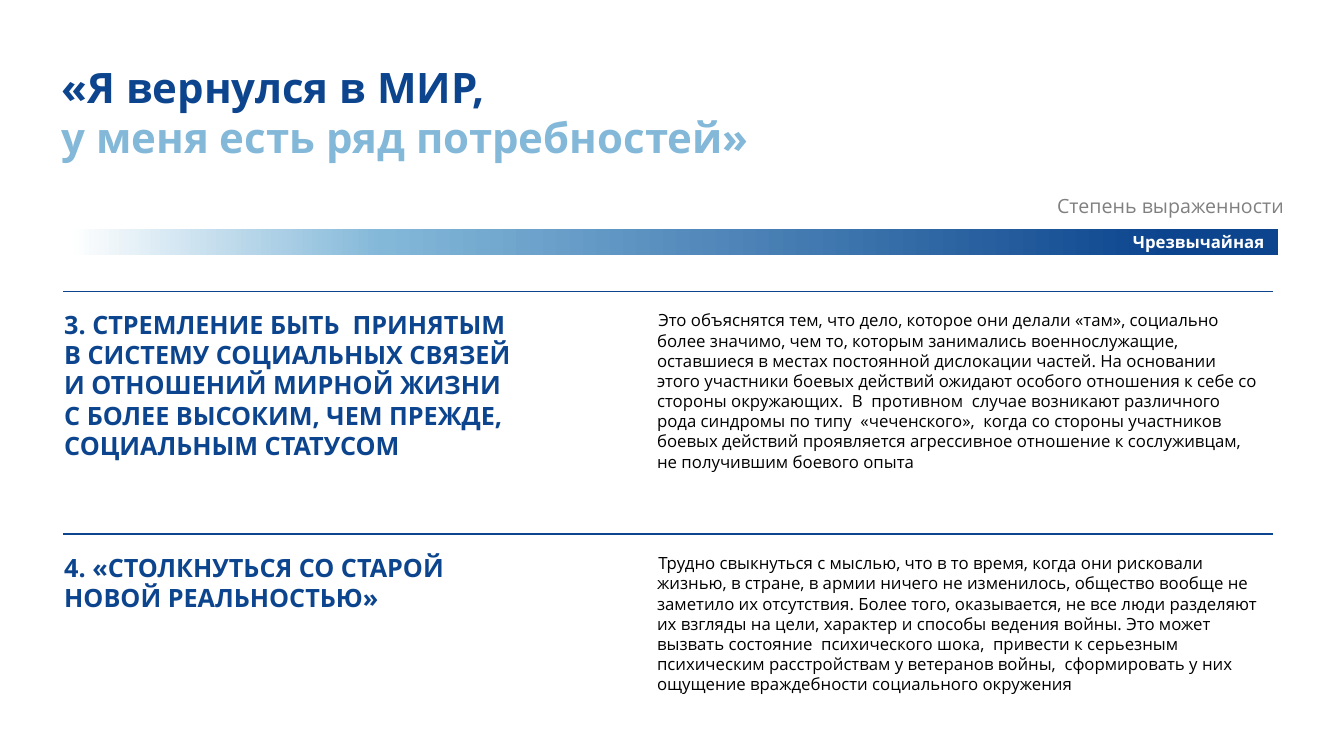
from dataclasses import dataclass

from lxml import etree
from pptx import Presentation
from pptx import util as u
from pptx.dml.color import RGBColor
from pptx.enum import shapes, text
from pptx.oxml import ns
from pptx.util import Cm


@dataclass(frozen=True)
class Theme:
    font: str = "Open Sans"
    navy: str = "0C458E"
    sky: str = "83B8D9"
    white: str = "FFFFFF"
    grey: str = "808080"
    black: str = "000000"
    title: int = 30
    heading: int = 18
    caption: int = 14
    body: int = 12


THEME = Theme()

NEEDS = [
    (
        ["3. СТРЕМЛЕНИЕ БЫТЬ  ПРИНЯТЫМ",
         "В СИСТЕМУ СОЦИАЛЬНЫХ СВЯЗЕЙ",
         "И ОТНОШЕНИЙ МИРНОЙ ЖИЗНИ",
         "С БОЛЕЕ ВЫСОКИМ, ЧЕМ ПРЕЖДЕ, СОЦИАЛЬНЫМ СТАТУСОМ"],
        12.32, 4.88,
        "Это объяснятся тем, что дело, которое они делали «там», социально "
        "более значимо, чем то, которым занимались военнослужащие, "
        "оставшиеся в местах постоянной дислокации частей. На основании "
        "этого участники боевых действий ожидают особого отношения к себе со "
        "стороны окружающих.  В  противном  случае возникают различного "
        "рода синдромы по типу  «чеченского»,  когда со стороны участников "
        "боевых действий проявляется агрессивное отношение к сослуживцам, "
        "не получившим боевого опыта",
        4.37,
    ),
    (
        ["4. «СТОЛКНУТЬСЯ СО СТАРОЙ НОВОЙ РЕАЛЬНОСТЬЮ»"],
        11.1, 1.8,
        "Трудно свыкнуться с мыслью, что в то время, когда они рисковали "
        "жизнью, в стране, в армии ничего не изменилось, общество вообще не "
        "заметило их отсутствия. Более того, оказывается, не все люди разделяют "
        "их взгляды на цели, характер и способы ведения войны. Это может "
        "вызвать состояние  психического шока,  привести к серьезным "
        "психическим расстройствам у ветеранов войны,  сформировать у них "
        "ощущение враждебности социального окружения",
        3.84,
    ),
]
FIRST_RULE_TOP, NEED_PITCH = 7.34, 6.12


def add_text(slide, box, lines, size, colors, bold=False):
    """Place one paragraph per line; the last colour serves any further lines."""
    frame = slide.shapes.add_textbox(*map(Cm, box)).text_frame
    frame.word_wrap = True
    frame.auto_size = text.MSO_AUTO_SIZE.SHAPE_TO_FIT_TEXT
    frame.text = "\n".join(lines)
    for index, paragraph in enumerate(frame.paragraphs):
        font = paragraph.runs[0].font
        font.name, font.size, font.bold = THEME.font, u.Pt(size), bold
        color = colors[min(index, len(colors) - 1)]
        font.color.rgb = RGBColor.from_string(color)
    return frame


def add_rule(slide, top):
    rule = slide.shapes.add_connector(
        shapes.MSO_CONNECTOR.STRAIGHT, Cm(1.6), Cm(top), Cm(32.08), Cm(top))
    rule.line.color.rgb = RGBColor.from_string(THEME.navy)
    rule.line.width = u.Pt(1)
    etree.SubElement(rule._element.spPr, ns.qn("a:effectLst"))


def add_scale_bar(slide, box, stops):
    bar = slide.shapes.add_shape(shapes.MSO_SHAPE.RECTANGLE, *map(Cm, box))
    bar.shadow.inherit = False
    bar.line.fill.background()
    # Three stops running from right to left
    gradient = etree.Element(ns.qn("a:gradFill"), rotWithShape="1")
    stop_list = etree.SubElement(gradient, ns.qn("a:gsLst"))
    for percent, color in stops:
        stop = etree.SubElement(stop_list, ns.qn("a:gs"), pos=str(percent * 1000))
        etree.SubElement(stop, ns.qn("a:srgbClr"), val=color)
    etree.SubElement(gradient, ns.qn("a:lin"), ang=str(180 * 60000), scaled="0")
    bar._element.spPr.find(ns.qn("a:prstGeom")).addnext(gradient)


def add_need(slide, top, heading, heading_width, heading_height,
             explanation, explanation_height):
    add_rule(slide, top)
    add_text(slide, (1.37, top + 0.33, heading_width, heading_height),
             heading, THEME.heading, [THEME.navy], bold=True)
    body = add_text(slide, (16.31, top + 0.35, 15.77, explanation_height),
                    [explanation], THEME.body, [THEME.black])
    properties = body.paragraphs[0]._p.get_or_add_pPr()
    properties.set("marL", "0")
    properties.set("indent", str(Cm(0.03)))


def main():
    deck = Presentation()
    deck.slide_width, deck.slide_height = Cm(33.87), Cm(19.05)
    slide = deck.slides.add_slide(deck.slide_layouts[6])

    # Title
    add_text(slide, (1.3, 1.42, 25.81, 2.82),
             ["«Я вернулся в МИР,", "у меня есть ряд потребностей»"],
             THEME.title, [THEME.navy, THEME.sky], bold=True)

    # Intensity scale
    add_text(slide, (26.39, 4.75, 6.58, 0.86), ["Степень выраженности"],
             THEME.caption, [THEME.grey])
    add_scale_bar(slide, (1.73, 5.77, 30.48, 0.66),
                  [(9, THEME.navy), (74, THEME.sky), (100, THEME.white)])
    add_text(slide, (28.3, 5.72, 5.23, 0.76), ["Чрезвычайная"],
             THEME.body, [THEME.white], bold=True)

    # Needs with their explanations
    for index, need in enumerate(NEEDS):
        add_need(slide, FIRST_RULE_TOP + index * NEED_PITCH, *need)

    deck.save("out.pptx")


if __name__ == "__main__":
    main()
